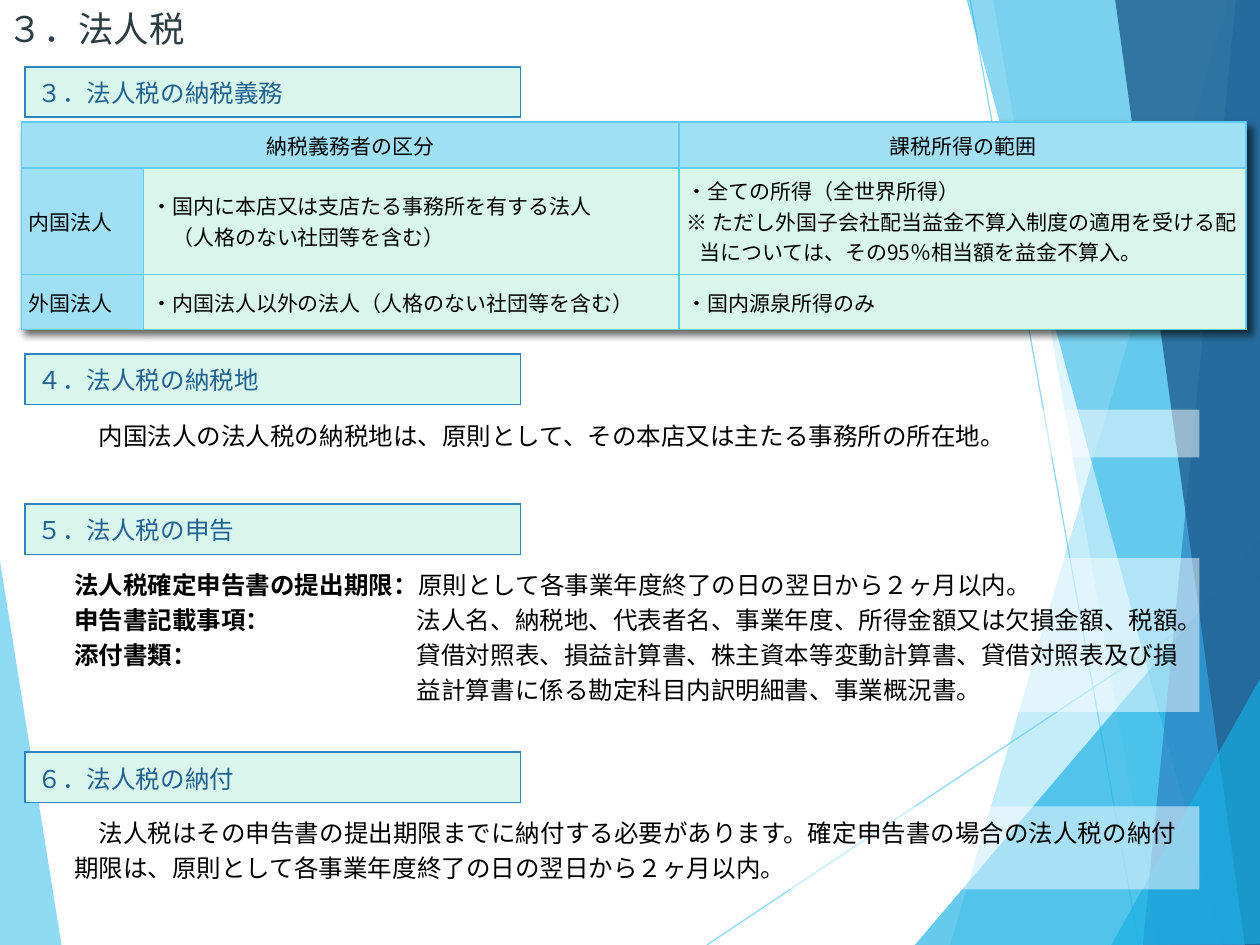
"""Build the corporate tax slide: liability table, place of payment, filing and payment."""
from dataclasses import dataclass

import pptx
import pptx.dml.color
import pptx.enum.shapes
import pptx.enum.text
import pptx.oxml
import pptx.oxml.ns
import pptx.util
from lxml import etree

RGBColor = pptx.dml.color.RGBColor
Inches, Pt = pptx.util.Inches, pptx.util.Pt
MIDDLE = pptx.enum.text.MSO_ANCHOR.MIDDLE
ALIGN = pptx.enum.text.PP_ALIGN
AUTO = pptx.enum.text.MSO_AUTO_SIZE
qn = pptx.oxml.ns.qn

FONT = "Noto Sans CJK JP"
SKY = RGBColor(0x5F, 0xCB, 0xEF)
CYAN = RGBColor(0x17, 0xB0, 0xE4)
BLUE = RGBColor(0x2E, 0x83, 0xC3)
NAVY = RGBColor(0x22, 0x62, 0x92)
SLATE = RGBColor(0x2C, 0x3C, 0x43)
PALE = RGBColor(0x9F, 0xE0, 0xF5)
MINT = RGBColor(0xD9, 0xF6, 0xEC)
WHITE = RGBColor(0xFF, 0xFF, 0xFF)
BLACK = RGBColor(0, 0, 0)


@dataclass
class Facet:
    points: list
    color: RGBColor
    opacity: int


@dataclass
class Section:
    heading: str
    top: float
    body_top: float = 0
    body_height: float = 0
    lines: tuple = ()


@dataclass
class Entry:
    lines: tuple
    fill: RGBColor
    hang: float = 0
    align: ALIGN = ALIGN.LEFT


FACETS = [
    Facet([(-0.01, 4.39), (0.49, 7.51), (-0.01, 7.5)], SKY, 70),
    Facet([(9.75, 0), (7.54, 7.5), (10.02, 7.51), (10.01, 0.01)], SKY, 36),
    Facet([(7.88, -0.01), (9.19, 7.5), (10.01, 7.5), (10.01, -0.01)], SKY, 20),
    Facet([(7.26, 7.5), (10, 4.29), (10.01, 7.5)], CYAN, 66),
    Facet([(7.67, -0.01), (9.7, 7.5), (10.01, 7.49), (10.01, -0.01)], CYAN, 50),
    Facet([(9.81, -0.01), (9.07, 7.5), (10.01, 7.5), (10, -0.01)], BLUE, 70),
    Facet([(8.85, -0.01), (9.88, 7.5), (10.02, 7.5), (10, -0.01)], NAVY, 82),
    Facet([(8.82, 7.5), (10.02, 5.35), (10.02, 7.49)], CYAN, 66),
]
RAYS = [((5.61, 7.5), (10.01, 4.57)), ((7.7, 0), (9.04, 7.5))]
SECTIONS = [
    Section("３．法人税の納税義務", 0.53),
    Section("４．法人税の納税地", 2.81, 3.25, 0.38, (
        ("", "　内国法人の法人税の納税地は、原則として、その本店又は主たる事務所の所在地。"),)),
    Section("５．法人税の申告", 4, 4.43, 1.22, (
        ("法人税確定申告書の提出期限：", "原則として各事業年度終了の日の翌日から２ヶ月以内。"),
        ("申告書記載事項：\t", "法人名、納税地、代表者名、事業年度、所得金額又は欠損金額、税額。"),
        ("添付書類：\t", "貸借対照表、損益計算書、株主資本等変動計算書、貸借対照表及び損益計算書に係る"
         "勘定科目内訳明細書、事業概況書。"))),
    Section("６．法人税の納付", 5.97, 6.4, 0.66, (
        ("", "　法人税はその申告書の提出期限までに納付する必要があります。確定申告書の場合の"
         "法人税の納付期限は、原則として各事業年度終了の日の翌日から２ヶ月以内。"),)),
]
LIABILITY = [
    [Entry(("納税義務者の区分",), PALE, align=ALIGN.CENTER), Entry(("",), PALE),
     Entry(("課税所得の範囲",), PALE, align=ALIGN.CENTER)],
    [Entry(("内国法人",), PALE),
     Entry(("・国内に本店又は支店たる事務所を有する法人", "　（人格のない社団等を含む）"), MINT, 0.09),
     Entry(("・全ての所得（全世界所得）",
            "※ ただし外国子会社配当益金不算入制度の適用を受ける配当については、"
            "その95％相当額を益金不算入。"), MINT, 0.1)],
    [Entry(("外国法人",), PALE),
     Entry(("・内国法人以外の法人（人格のない社団等を含む）",), MINT, 0.09),
     Entry(("・国内源泉所得のみ",), MINT, 0.1)],
]


def write(p, text: str, size: float = 14, color: RGBColor = BLACK, bold: bool = False) -> None:
    r = p.add_run()
    r.text = text
    r.font.name, r.font.size, r.font.bold = FONT, Pt(size), bold
    r.font.color.rgb = color
    etree.SubElement(r.font._element, qn("a:ea"), typeface=FONT)


def hang_indent(p, inches: float) -> None:
    pPr = p._p.get_or_add_pPr()
    pPr.set("marL", str(Inches(inches)))
    pPr.set("indent", str(-Inches(inches)))


def set_opacity(fill_parent, percent: int) -> None:
    clr = fill_parent.find(qn("a:solidFill"))[0]
    etree.SubElement(clr, qn("a:alpha"), val=str(percent * 1000))


def fill_shape(sp, color: RGBColor, opacity: int) -> None:
    sp.shadow.inherit = False
    sp.fill.solid()
    sp.fill.fore_color.rgb = color
    set_opacity(sp._element.spPr, opacity)
    sp.line.fill.background()


def add_facet(s, facet: Facet) -> None:
    points = [(Inches(x), Inches(y)) for x, y in facet.points]
    fb = s.shapes.build_freeform(*points[0], scale=1)
    fb.add_line_segments(points[1:], close=True)
    fill_shape(fb.convert_to_shape(), facet.color, facet.opacity)


def add_ray(s, start: tuple, end: tuple) -> None:
    ends = [Inches(v) for v in start + end]
    cx = s.shapes.add_connector(pptx.enum.shapes.MSO_CONNECTOR.STRAIGHT, *ends)
    cx.line.color.rgb, cx.line.width = SKY, Pt(0.75)
    set_opacity(cx.line._get_or_add_ln(), 70)
    etree.SubElement(cx._element.spPr, qn("a:effectLst"))


def add_grid(s, left: float, top: float, cols: list, rows: list):
    size = Inches(sum(cols)), Inches(sum(rows))
    tbl = s.shapes.add_table(len(rows), len(cols), Inches(left), Inches(top), *size).table
    tbl.first_row = tbl.horz_banding = False
    for col, width in zip(tbl.columns, cols):
        col.width = Inches(width)
    for row, height in zip(tbl.rows, rows):
        row.height = Inches(height)
    return tbl


def style_cell(cell, fill: RGBColor, border: RGBColor) -> None:
    tcPr = cell._tc.get_or_add_tcPr()
    for side in "LRTB":
        ln = etree.SubElement(tcPr, qn(f"a:ln{side}"), w=str(Pt(1)))
        etree.SubElement(etree.SubElement(ln, qn("a:solidFill")), qn("a:srgbClr"), val=str(border))
    cell.fill.solid()
    cell.fill.fore_color.rgb = fill
    cell.vertical_anchor = MIDDLE


def add_liability(s) -> None:
    tbl = add_grid(s, 0.17, 0.97, [0.97, 4.25, 4.5], [0.36, 0.84, 0.44])
    effects = etree.SubElement(tbl._tbl.tblPr, qn("a:effectLst"))
    tbl._tbl.tblPr.insert(0, effects)
    shadow = etree.SubElement(effects, qn("a:outerShdw"), blurRad=str(Pt(4)), dist=str(Pt(3)),
                              dir="2700000", algn="tl", rotWithShape="0")
    clr = etree.SubElement(shadow, qn("a:srgbClr"), val="000000")
    etree.SubElement(clr, qn("a:alpha"), val="60000")
    for i, row in enumerate(LIABILITY):
        for j, entry in enumerate(row):
            cell = tbl.cell(i, j)
            style_cell(cell, entry.fill, SKY)
            cell.margin_left = cell.margin_right = Inches(0.06)
            cell.margin_top = cell.margin_bottom = Inches(0.06)
            for k, line in enumerate(entry.lines):
                p = cell.text_frame.add_paragraph() if k else cell.text_frame.paragraphs[0]
                p.alignment = entry.align
                hang_indent(p, entry.hang)
                if line:
                    write(p, line, size=12)
    tbl.cell(0, 0).merge(tbl.cell(0, 1))


def add_section(s, section: Section) -> None:
    cell = add_grid(s, 0.2, section.top, [3.93], [0.4]).cell(0, 0)
    style_cell(cell, MINT, BLUE)
    write(cell.text_frame.paragraphs[0], section.heading, color=NAVY)
    if not section.lines:
        return
    sp = s.shapes.add_shape(pptx.enum.shapes.MSO_SHAPE.RECTANGLE, Inches(0.49),
                            Inches(section.body_top), Inches(9.03), Inches(section.body_height))
    fill_shape(sp, WHITE, 50)
    tf = sp.text_frame
    tf.word_wrap, tf.auto_size = True, AUTO.SHAPE_TO_FIT_TEXT
    tf.vertical_anchor = pptx.enum.text.MSO_ANCHOR.TOP
    for k, (label, text) in enumerate(section.lines):
        p = tf.add_paragraph() if k else tf.paragraphs[0]
        p.alignment, p.line_spacing = ALIGN.LEFT, Pt(20)
        if label:
            hang_indent(p, 2.72)
            write(p, label, bold=True)
        write(p, text)


def add_title(s, text: str) -> None:
    sp = s.shapes.title
    sp.left, sp.top, sp.width, sp.height = 0, 0, Inches(4), Inches(0.45)
    tf = sp.text_frame
    tf.auto_size, tf.vertical_anchor = AUTO.NONE, MIDDLE
    tf.margin_left = tf.margin_right = tf.margin_top = tf.margin_bottom = 0
    tf.paragraphs[0].alignment = ALIGN.LEFT
    write(tf.paragraphs[0], text, size=20.2, color=SLATE)


def main() -> None:
    prs = pptx.Presentation()
    prs.slide_width, prs.slide_height = Inches(10), Inches(7.5)
    s = prs.slides.add_slide(prs.slide_layouts[5])
    add_facet(s, FACETS[0])
    for start, end in RAYS:
        add_ray(s, start, end)
    for facet in FACETS[1:]:
        add_facet(s, facet)
    add_liability(s)
    add_title(s, " ３．法人税")
    for section in SECTIONS:
        add_section(s, section)
    prs.save("out.pptx")


if __name__ == "__main__":
    main()
